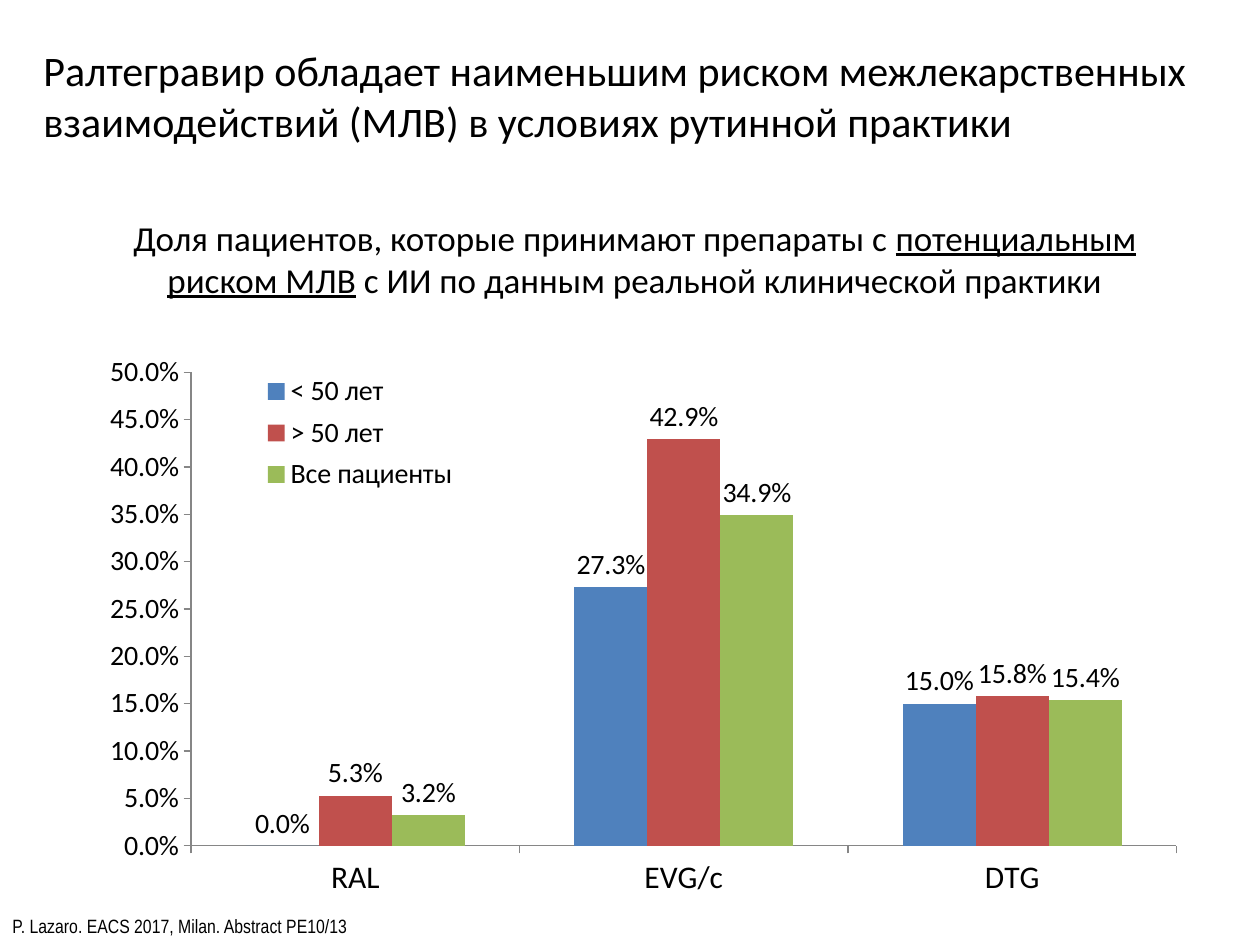
from lxml import etree
from pptx import Presentation, util as u
from pptx.chart.data import CategoryChartData
from pptx.dml.color import RGBColor
from pptx.enum import chart as charts, text
from pptx.oxml.ns import qn

PX = u.Inches(1) // 126
COLORS = {"text": "000000", "axis": "868686", "young": "4F81BD",
          "older": "C0504D", "all": "9BBB59"}

TITLE = ["Ралтегравир обладает наименьшим риском межлекарственных "
         "взаимодействий (МЛВ) в условиях рутинной практики"]
# Odd runs are underlined
SUBTITLE = ["Доля пациентов, которые принимают препараты с ",
            "потенциальным риском МЛВ",
            " с ИИ по данным реальной клинической практики"]
SOURCE = ["P. Lazaro. EACS 2017, Milan. Abstract PE10/13"]

DRUGS = ["RAL", "EVG/c", "DTG"]
AGE_GROUPS = [
    ("< 50 лет", "young", (0, 0.273, 0.15)),
    ("> 50 лет", "older", (0.053, 0.429, 0.158)),
    ("Все пациенты", "all", (0.032, 0.349, 0.154)),
]
CHART_BOX = (63, 353, 1134, 549)
PLOT_BOX = (191, 372, 985, 474)
LEGEND_BOX = (258, 367, 204, 132)


def color(name):
    return RGBColor.from_string(COLORS[name])


def add_text(slide, runs, box, size, font="Calibri", align=text.PP_ALIGN.LEFT,
             anchor=text.MSO_ANCHOR.TOP, wrap=True, grow=True):
    shape = slide.shapes.add_textbox(*(value * PX for value in box))
    frame = shape.text_frame
    frame.word_wrap = wrap
    frame.vertical_anchor = anchor
    frame.auto_size = (text.MSO_AUTO_SIZE.SHAPE_TO_FIT_TEXT if grow
                       else text.MSO_AUTO_SIZE.NONE)
    paragraph = frame.paragraphs[0]
    paragraph.alignment = align
    for index, words in enumerate(runs):
        run = paragraph.add_run()
        run.text = words
        run.font.name = font
        run.font.size = u.Pt(size)
        run.font.color.rgb = color("text")
        if index % 2:
            run.font.underline = True


def manual_layout(box, inner=False):
    """Return a c:layout that places a chart part at a slide box in px."""
    left, top, width, height = CHART_BOX
    layout = etree.Element(qn("c:layout"))
    manual = etree.SubElement(layout, qn("c:manualLayout"))
    settings = [("layoutTarget", "inner")] if inner else []
    settings += [("xMode", "edge"), ("yMode", "edge")]
    fractions = ((box[0] - left) / width, (box[1] - top) / height,
                 box[2] / width, box[3] / height)
    settings += [(key, f"{value:.3f}") for key, value in zip("xywh", fractions)]
    for key, value in settings:
        etree.SubElement(manual, qn(f"c:{key}")).set("val", value)
    return layout


def place_parts(chart):
    """Fix the plot area and the legend inside the chart."""
    plot_area = chart.element.find(".//" + qn("c:plotArea"))
    legend = chart.element.find(".//" + qn("c:legend"))
    for part in (plot_area, legend):
        for layout in part.findall(qn("c:layout")):
            part.remove(layout)
    plot_area.insert(0, manual_layout(PLOT_BOX, inner=True))
    legend.find(qn("c:legendPos")).addnext(manual_layout(LEGEND_BOX))


def add_risk_chart(slide):
    data = CategoryChartData(number_format="0.0%")
    data.categories = DRUGS
    for name, _, values in AGE_GROUPS:
        data.add_series(name, values)
    chart = slide.shapes.add_chart(charts.XL_CHART_TYPE.COLUMN_CLUSTERED,
                                   *(value * PX for value in CHART_BOX), data).chart
    chart.has_title = False
    chart.font.name = "Calibri"
    chart.font.size = u.Pt(16)
    chart.font.color.rgb = color("text")

    plot = chart.plots[0]
    plot.gap_width, plot.overlap, plot.vary_by_categories = 150, 0, False
    for series, (_, key, _) in zip(plot.series, AGE_GROUPS):
        series.format.fill.solid()
        series.format.fill.fore_color.rgb = color(key)
        series.invert_if_negative = False
        labels = series.data_labels
        labels.show_value = True
        labels.number_format = "0.0%"
        labels.number_format_is_linked = False
        labels.position = charts.XL_LABEL_POSITION.OUTSIDE_END

    for axis in (chart.category_axis, chart.value_axis):
        axis.has_major_gridlines = False
        axis.major_tick_mark = charts.XL_TICK_MARK.OUTSIDE
        axis.format.line.color.rgb = color("axis")
    chart.category_axis.tick_labels.font.size = u.Pt(18)
    value_axis = chart.value_axis
    value_axis.minimum_scale, value_axis.maximum_scale = 0, 0.5
    value_axis.major_unit = 0.05
    value_axis.tick_labels.number_format = "0.0%"
    value_axis.tick_labels.number_format_is_linked = False

    chart.has_legend = True
    chart.legend.position = charts.XL_LEGEND_POSITION.RIGHT
    chart.legend.include_in_layout = False
    place_parts(chart)


def main():
    presentation = Presentation()
    presentation.slide_width, presentation.slide_height = 1260 * PX, 945 * PX
    slide = presentation.slides.add_slide(presentation.slide_layouts[6])
    add_risk_chart(slide)
    add_text(slide, SUBTITLE, (73, 210, 1124, 97), 20, align=text.PP_ALIGN.CENTER)
    add_text(slide, SOURCE, (0, 908, 391, 37), 11, font="Arial Narrow", wrap=False)
    add_text(slide, TITLE, (31, 16, 1176, 158), 24,
             anchor=text.MSO_ANCHOR.MIDDLE, grow=False)
    presentation.save("out.pptx")


if __name__ == "__main__":
    main()
